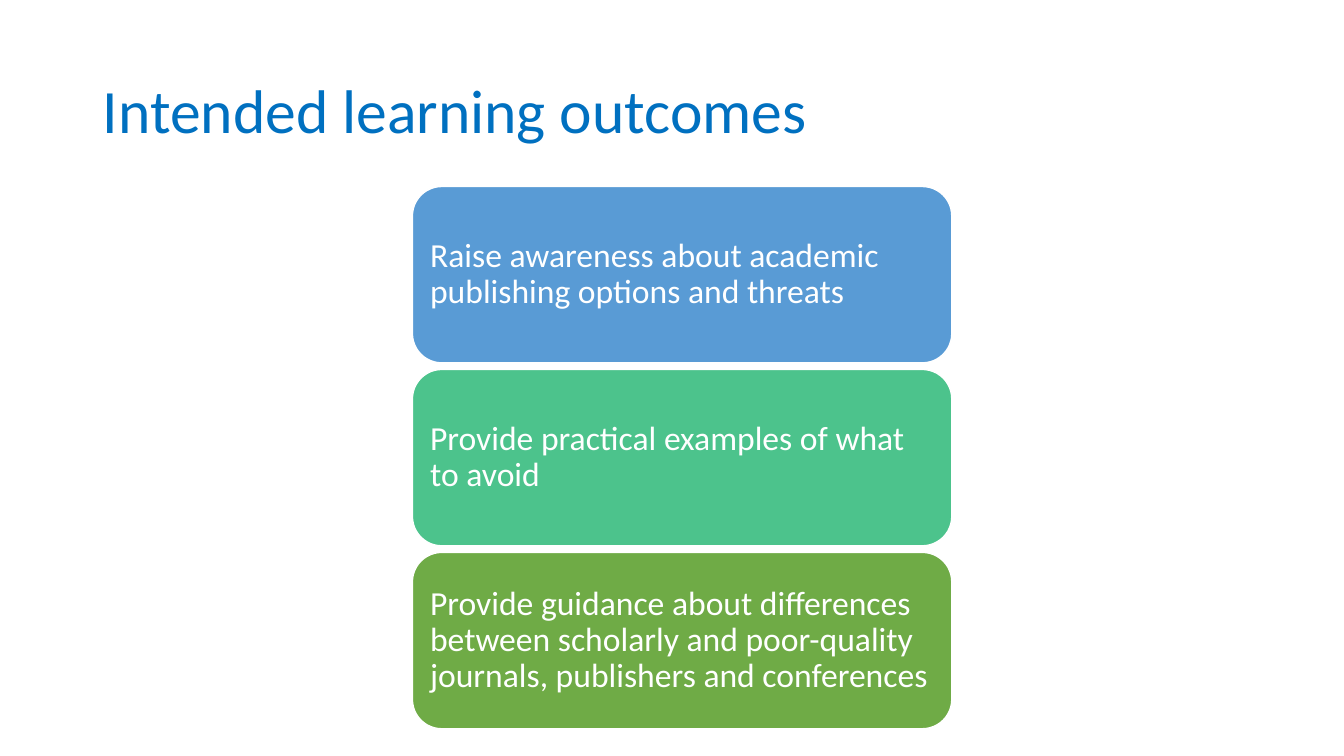
"""Build the slide of intended learning outcomes."""
from dataclasses import dataclass

from pptx import Presentation
from pptx.dml.color import RGBColor as Color
from pptx.enum.shapes import MSO_SHAPE as Shape
from pptx.enum.text import MSO_ANCHOR as Anchor, MSO_AUTO_SIZE as AutoSize, PP_ALIGN as Align
from pptx.util import Inches, Pt


@dataclass(frozen=True)
class Theme:
    """Colours, font and type sizes of the slide."""
    font: str = "Calibri"
    title_size: int = 44
    card_size: int = 24
    title: str = "0070C0"
    light: str = "FFFFFF"
    cards: tuple = ("599BD5", "4CC38C", "6FAB46")


THEME = Theme()
WIDTH, HEIGHT = 13.33, 7.5
CARD_LEFT, CARD_TOP = 4.09, 1.85
CARD_WIDTH, CARD_HEIGHT = 5.35, 1.75
ROW_STEP = 1.815
OUTCOMES = (
    "Raise awareness about academic publishing options and threats",
    "Provide practical examples of what to avoid",
    "Provide guidance about differences between scholarly and poor-quality "
    "journals, publishers and conferences",
)


def write_text(shape, text, *, size, color, inset=(0.1, 0.05)):
    """Write one left-aligned, vertically centred paragraph in a shape."""
    frame = shape.text_frame
    frame.text = text
    frame.word_wrap = True
    frame.auto_size = AutoSize.NONE
    frame.vertical_anchor = Anchor.MIDDLE
    frame.margin_left = frame.margin_right = Inches(inset[0])
    frame.margin_top = frame.margin_bottom = Inches(inset[1])
    paragraph = frame.paragraphs[0]
    paragraph.alignment = Align.LEFT
    paragraph.line_spacing = 0.9
    font = paragraph.runs[0].font
    font.name = THEME.font
    font.size = Pt(size)
    font.color.rgb = Color.from_string(color)


def add_title(slide, text):
    """Place and fill the title placeholder."""
    title = slide.shapes.title
    title.left, title.top = Inches(0.92), Inches(0.4)
    title.width, title.height = Inches(11.5), Inches(1.45)
    write_text(title, text, size=THEME.title_size, color=THEME.title)


def add_card(slide, row, text, fill):
    """Add the rounded card of one outcome on its row."""
    card = slide.shapes.add_shape(
        Shape.ROUNDED_RECTANGLE, Inches(CARD_LEFT), Inches(CARD_TOP + row * ROW_STEP),
        Inches(CARD_WIDTH), Inches(CARD_HEIGHT))
    card.adjustments[0] = 0.167
    card.shadow.inherit = False
    card.fill.solid()
    card.fill.fore_color.rgb = Color.from_string(fill)
    card.line.color.rgb = Color.from_string(THEME.light)
    card.line.width = Pt(1)
    write_text(card, text, size=THEME.card_size, color=THEME.light, inset=(0.09, 0.08))


def main():
    """Create the presentation and save it."""
    presentation = Presentation()
    presentation.slide_width, presentation.slide_height = Inches(WIDTH), Inches(HEIGHT)
    slide = presentation.slides.add_slide(presentation.slide_layouts.get_by_name("Title Only"))
    add_title(slide, "Intended learning outcomes")
    for row, (text, fill) in enumerate(zip(OUTCOMES, THEME.cards)):
        add_card(slide, row, text, fill)
    presentation.save("out.pptx")


if __name__ == "__main__":
    main()
